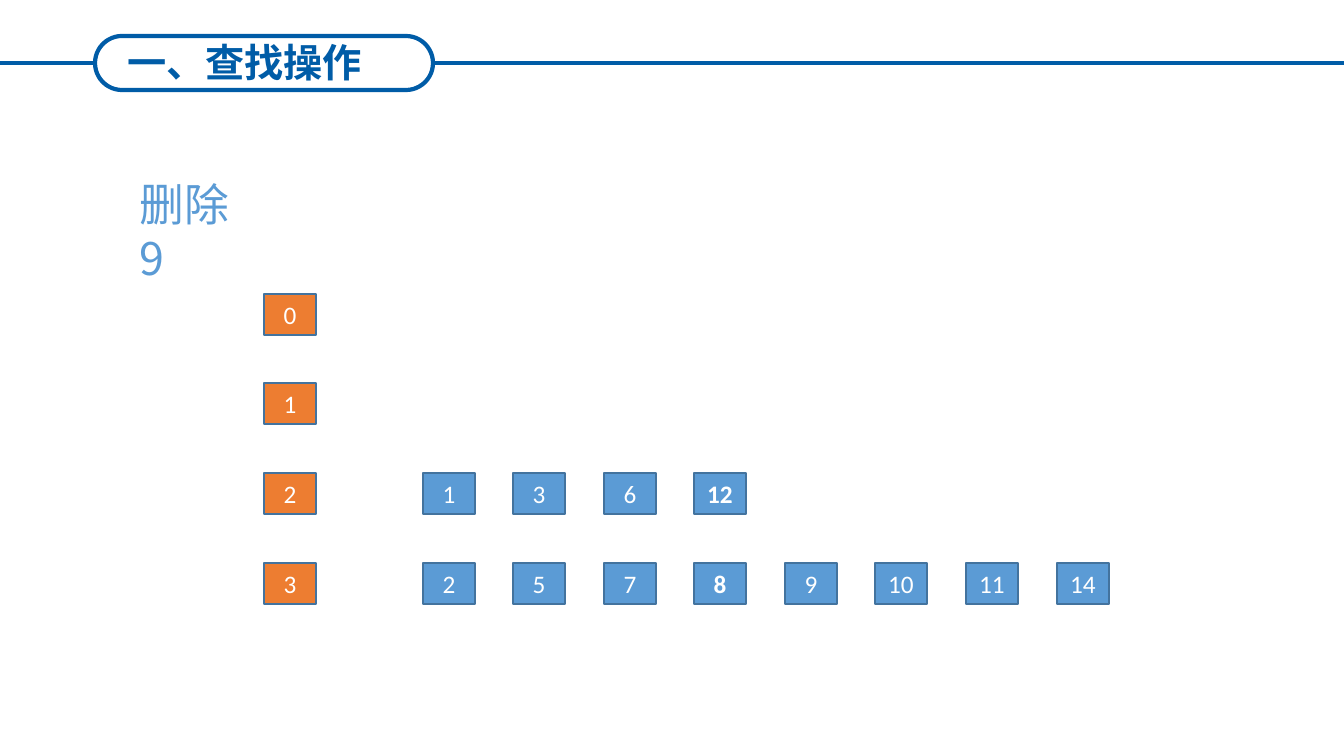
"""Build a slide showing hash buckets and their chained keys when deleting 9."""

from dataclasses import dataclass

from lxml.etree import SubElement
from pptx import Presentation
from pptx.dml.color import RGBColor
from pptx.enum.shapes import MSO_CONNECTOR, MSO_SHAPE
from pptx.enum.text import MSO_ANCHOR, MSO_AUTO_SIZE, PP_ALIGN
from pptx.oxml.ns import qn
from pptx.util import Emu, Pt

TITLE = "一、查找操作"
OPERATION = "删除9"
BUCKETS = {
    "0": [],
    "1": [],
    "2": ["1", "3", "6", "12"],
    "3": ["2", "5", "7", "8", "9", "10", "11", "14"],
}
BOLD_KEYS = ("12", "8")

SLIDE_WIDTH, SLIDE_HEIGHT = 1344, 756
CAPSULE_BOX = (95, 36, 338, 54)
TITLE_BOX = (74, 33, 341, 57)
OPERATION_BOX = (130, 172, 133, 64)
CELL_WIDTH, CELL_HEIGHT = 52, 41
BUCKET_LEFT, FIRST_KEY_LEFT, LAST_KEY_LEFT = 264, 423, 1057
FIRST_ROW_TOP, LAST_ROW_TOP = 294, 563


@dataclass(frozen=True)
class Theme:
    """Colours, fonts and type sizes of the slide."""

    title: RGBColor = RGBColor(0x00, 0x5C, 0xA7)
    key: RGBColor = RGBColor(0x5B, 0x9B, 0xD5)
    bucket: RGBColor = RGBColor(0xED, 0x7D, 0x31)
    border: RGBColor = RGBColor(0x43, 0x73, 0x9E)
    cell_text: RGBColor = RGBColor(0xFF, 0xFF, 0xFF)
    chinese_font: str = "Noto Sans CJK SC"
    cell_font: str = "Calibri"
    title_size: int = 28
    operation_size: int = 32
    cell_size: int = 18


THEME = Theme()


def px(length):
    """Turn pixels into EMU."""
    return Emu(round(length * 914400 / 100.8))


def write(shape, text, font_name, size, color, bold=False, align=PP_ALIGN.CENTER, anchor=MSO_ANCHOR.MIDDLE):
    """Put one formatted line of text into a shape."""
    frame = shape.text_frame
    frame.text = text
    frame.word_wrap = True
    frame.auto_size = MSO_AUTO_SIZE.NONE
    frame.vertical_anchor = anchor
    paragraph = frame.paragraphs[0]
    paragraph.alignment = align
    run = paragraph.runs[0]
    run.font.size = Pt(size)
    run.font.bold = bold
    run.font.color.rgb = color
    run.font.name = font_name
    SubElement(run._r.get_or_add_rPr(), qn("a:ea"), typeface=font_name)


def add_title(slide):
    """Add the capsule, the rules joined to its sides and the title."""
    capsule = slide.shapes.add_shape(MSO_SHAPE.ROUNDED_RECTANGLE, *map(px, CAPSULE_BOX))
    capsule.adjustments[0] = 0.5
    capsule.shadow.inherit = False
    capsule.fill.background()
    capsule.line.color.rgb = THEME.title
    capsule.line.width = Pt(3)
    middle = px(CAPSULE_BOX[1] + CAPSULE_BOX[3] // 2)
    for edge, side in ((0, 1), (SLIDE_WIDTH, 3)):
        rule = slide.shapes.add_connector(MSO_CONNECTOR.STRAIGHT, px(edge), middle, px(edge), middle)
        rule.end_connect(capsule, side)
        rule.line.color.rgb = THEME.title
        rule.line.width = Pt(3)
        SubElement(rule._element.spPr, qn("a:effectLst"))
    title = slide.shapes.title
    title.left, title.top, title.width, title.height = map(px, TITLE_BOX)
    write(title, TITLE, THEME.chinese_font, THEME.title_size, THEME.title, bold=True)


def add_cell(slide, text, left, top, fill, bold=False):
    """Add one bucket or key cell."""
    cell = slide.shapes.add_shape(MSO_SHAPE.RECTANGLE, *map(px, (left, top, CELL_WIDTH, CELL_HEIGHT)))
    cell.shadow.inherit = False
    cell.fill.solid()
    cell.fill.fore_color.rgb = fill
    cell.line.color.rgb = THEME.border
    cell.line.width = Pt(1)
    write(cell, text, THEME.cell_font, THEME.cell_size, THEME.cell_text, bold)


def add_buckets(slide):
    """Lay out the buckets in rows with their keys to the right."""
    row_gaps = len(BUCKETS) - 1
    key_gaps = max(map(len, BUCKETS.values())) - 1
    for row, (bucket, keys) in enumerate(BUCKETS.items()):
        top = FIRST_ROW_TOP + (LAST_ROW_TOP - FIRST_ROW_TOP) * row // row_gaps
        add_cell(slide, bucket, BUCKET_LEFT, top, THEME.bucket)
        for column, key in enumerate(keys):
            left = FIRST_KEY_LEFT + (LAST_KEY_LEFT - FIRST_KEY_LEFT) * column // key_gaps
            add_cell(slide, key, left, top, THEME.key, key in BOLD_KEYS)


def main():
    """Build and save the presentation."""
    presentation = Presentation()
    presentation.slide_width, presentation.slide_height = px(SLIDE_WIDTH), px(SLIDE_HEIGHT)
    slide = presentation.slides.add_slide(presentation.slide_layouts[5])
    add_title(slide)
    add_buckets(slide)
    operation = slide.shapes.add_textbox(*map(px, OPERATION_BOX))
    write(operation, OPERATION, THEME.chinese_font, THEME.operation_size, THEME.key,
          align=PP_ALIGN.LEFT, anchor=MSO_ANCHOR.TOP)
    presentation.save("out.pptx")


if __name__ == "__main__":
    main()
